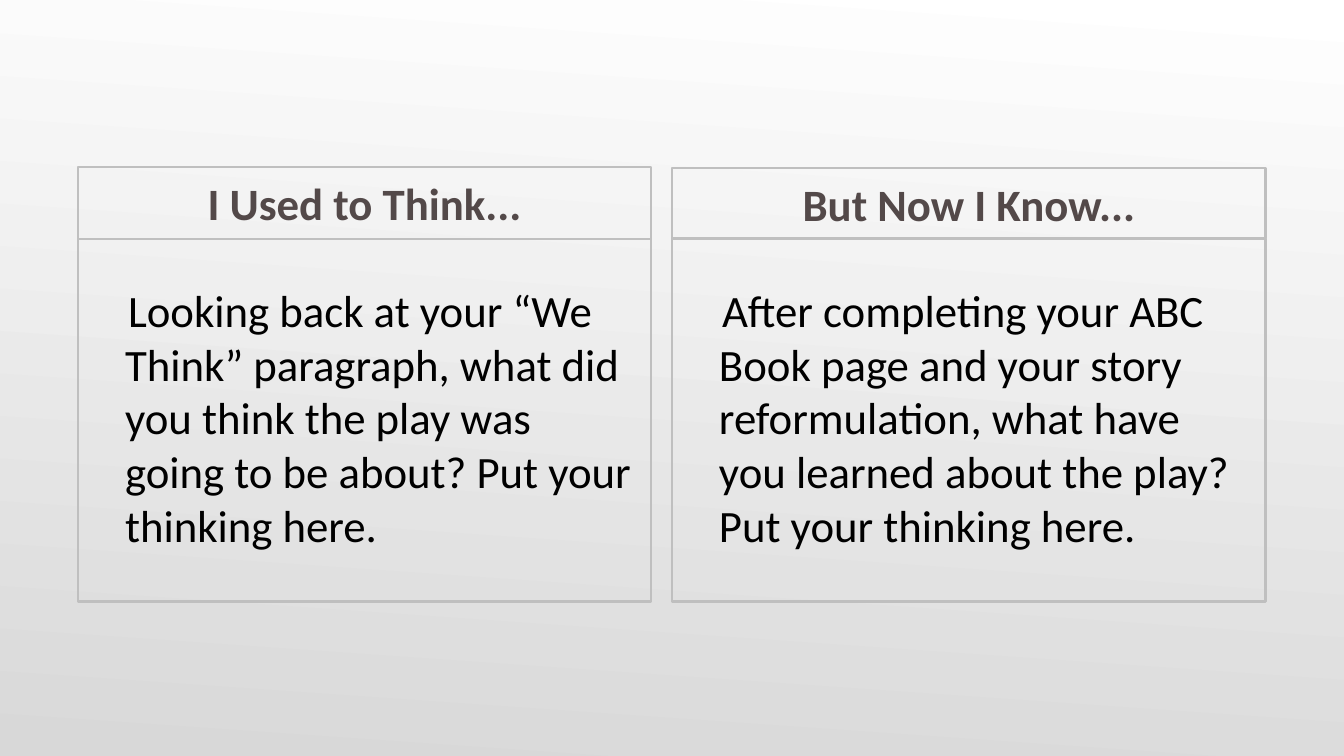
from pptx import Presentation, util as u
from pptx.dml.color import RGBColor
from pptx.enum import shapes, text


def px(n):
    return u.Emu(round(n * 914400 / 134.4))


def box(area, words, size, tint, bold, side, foot):
    """Add an outlined, unfilled box with one run of text; return its paragraph."""
    rect = slide.shapes.add_shape(shapes.MSO_SHAPE.RECTANGLE, *map(px, area))
    rect.shadow.inherit = False
    rect.fill.background()
    rect.line.color.rgb = RGBColor.from_string("BFBFBF")
    rect.line.width = u.Pt(1.5)
    frame = rect.text_frame
    frame.word_wrap = True
    frame.vertical_anchor = text.MSO_ANCHOR.MIDDLE
    frame.margin_left = frame.margin_right = px(side)
    frame.margin_top, frame.margin_bottom = 0, px(foot)
    para = frame.paragraphs[0]
    run = para.add_run()
    run.text = words
    run.font.name = "Calibri"
    run.font.size = u.Pt(size)
    run.font.bold = bold
    run.font.color.rgb = RGBColor.from_string(tint)
    return para


deck = Presentation()
deck.slide_width, deck.slide_height = px(1344), px(756)
slide = deck.slides.add_slide(deck.slide_layouts[6])

back = slide.background.fill
back.gradient()
back.gradient_angle = 266
for stop, tint in zip(back.gradient_stops, ("FFFFFF", "D8D8D8")):
    stop.color.rgb = RGBColor.from_string(tint)

cols = [
    (78, 167, 573, "I Used to Think...",
     "Looking back at your “We Think” paragraph, what did you think the play "
     "was going to be about? Put your thinking here."),
    (672, 168, 594, "But Now I Know...",
     "After completing your ABC Book page and your story reformulation, what "
     "have you learned about the play? Put your thinking here."),
]
split, end = 239, 602
for left, top, wide, head, body in cols:
    para = box((left, top, wide, split - top), head, 24, "534949", True, 7, 0)
    para.alignment = text.PP_ALIGN.CENTER

    para = box((left, split, wide, end - split), body, 24, "000000", False, 13, 7)
    para.alignment = text.PP_ALIGN.LEFT
    props = para._p.get_or_add_pPr()
    props.set("marL", str(px(34)))
    props.set("indent", str(px(3)))

deck.save("out.pptx")
